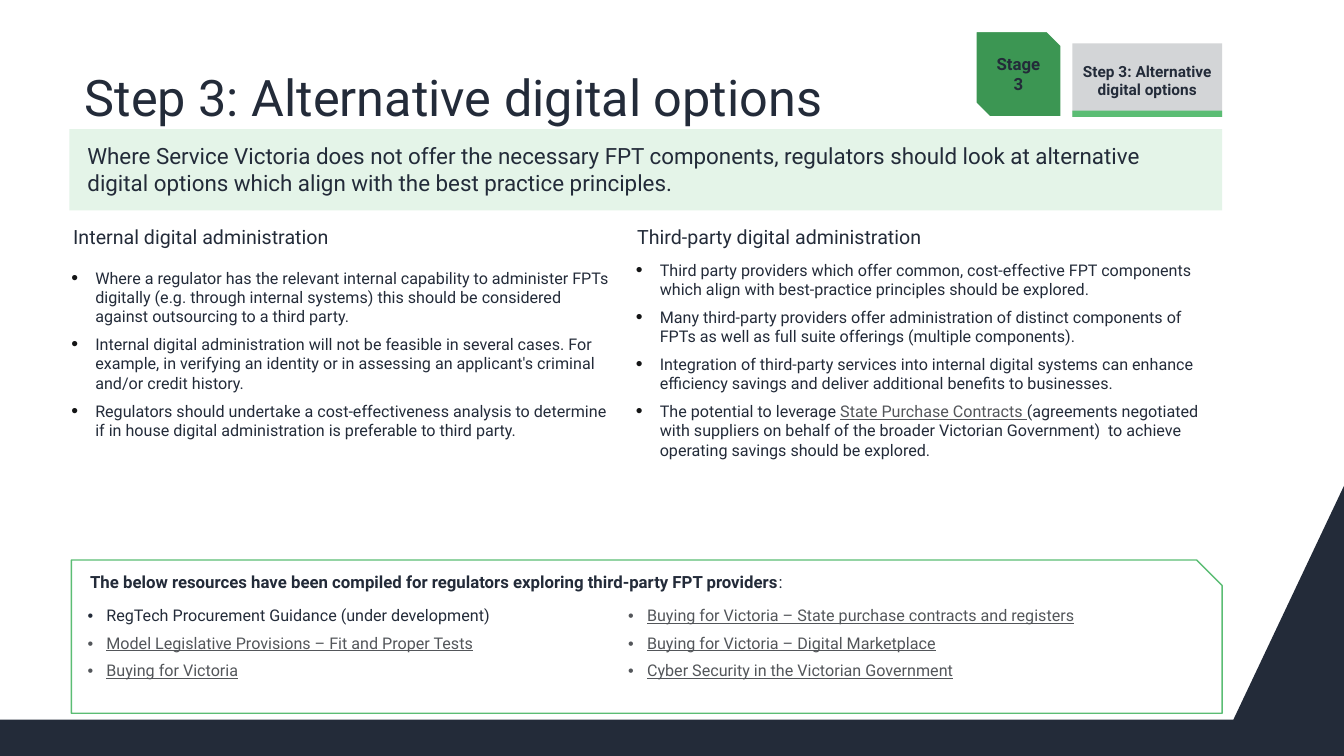
from lxml import etree
from pptx import Presentation
from pptx.dml.color import RGBColor
from pptx.enum.shapes import MSO_SHAPE
from pptx.enum.text import MSO_ANCHOR, PP_ALIGN
from pptx.oxml.ns import qn
from pptx.util import Pt

LEFT, CENTER = PP_ALIGN.LEFT, PP_ALIGN.CENTER
TOP, MIDDLE, BOTTOM = MSO_ANCHOR.TOP, MSO_ANCHOR.MIDDLE, MSO_ANCHOR.BOTTOM
RECT = MSO_SHAPE.RECTANGLE
SNIP_CORNER, SNIP_DIAGONAL = MSO_SHAPE.SNIP_1_RECTANGLE, MSO_SHAPE.SNIP_2_DIAG_RECTANGLE

FONT = "Roboto"
COLORS = {
    "ink": "232B39", "link": "53565A", "bullet": "141516", "white": "FFFFFF",
    "stage": "3C9653", "accent": "5BBD74", "pale": "E4F4E8", "grey": "D3D5D7",
}


def rgb(name):
    return RGBColor.from_string(COLORS[name])


def link(text):
    return (text, {"color": "link", "underline": True})


def add_bullet(paragraph, indent, color, percent):
    props = paragraph._p.get_or_add_pPr()
    props.set("marL", str(Pt(indent)))
    props.set("indent", str(-Pt(indent)))
    if color:
        fill = etree.SubElement(props, qn("a:buClr"))
        etree.SubElement(fill, qn("a:srgbClr"), val=COLORS[color])
    etree.SubElement(props, qn("a:buSzPct"), val=str(percent * 1000))
    etree.SubElement(props, qn("a:buFont"), typeface="Arial")
    etree.SubElement(props, qn("a:buChar"), char="•")


def write(frame, paragraphs, size=11.5, bold=False, align=LEFT, before=0, after=0,
          spacing=None, indent=0, bullet_color=None, bullet_percent=100):
    """Fill a text frame; each paragraph is a list of strings or (text, format) pairs."""
    frame.word_wrap = True
    for index, parts in enumerate(paragraphs):
        paragraph = frame.add_paragraph() if index else frame.paragraphs[0]
        paragraph.alignment = align
        paragraph.space_before, paragraph.space_after = Pt(before), Pt(after)
        if spacing:
            paragraph.line_spacing = spacing
        if indent:
            add_bullet(paragraph, indent, bullet_color, bullet_percent)
        for part in parts:
            if part == "\n":
                paragraph.add_line_break()
                continue
            text, style = (part, {}) if isinstance(part, str) else part
            run = paragraph.add_run()
            run.text = text
            run.font.name, run.font.size = FONT, Pt(size)
            run.font.bold = style.get("bold", bold)
            run.font.underline = style.get("underline", False)
            run.font.color.rgb = rgb(style.get("color", "ink"))


class Deck:
    """Holds the presentation style and the current slide."""

    def __init__(self, width, height):
        self.presentation = Presentation()
        self.presentation.slide_width, self.presentation.slide_height = Pt(width), Pt(height)
        self.slide = self.presentation.slides.add_slide(self.presentation.slide_layouts[6])

    def paint(self, shape, fill, line=None, line_width=1):
        shape.shadow.inherit = False
        if fill:
            shape.fill.solid()
            shape.fill.fore_color.rgb = rgb(fill)
        else:
            shape.fill.background()
        if line:
            shape.line.color.rgb, shape.line.width = rgb(line), Pt(line_width)
        else:
            shape.line.fill.background()

    def outline(self, points, fill):
        builder = self.slide.shapes.build_freeform(*map(Pt, points[0]), scale=1.0)
        builder.add_line_segments([(Pt(x), Pt(y)) for x, y in points[1:]], close=True)
        self.paint(builder.convert_to_shape(), fill)

    def box(self, kind, bounds, fill=None, line=None, line_width=1, paragraphs=(), **style):
        shape = self.slide.shapes.add_shape(kind, *map(Pt, bounds))
        self.paint(shape, fill, line, line_width)
        shape.text_frame.vertical_anchor = MIDDLE
        write(shape.text_frame, paragraphs, align=CENTER, **style)

    def text(self, bounds, paragraphs, anchor=TOP, side=7.2, **style):
        frame = self.slide.shapes.add_textbox(*map(Pt, bounds)).text_frame
        frame.vertical_anchor = anchor
        frame.margin_left = frame.margin_right = Pt(side)
        write(frame, paragraphs, **style)

    def table(self, bounds, columns, **style):
        table = self.slide.shapes.add_table(1, len(columns), *map(Pt, bounds)).table
        for cell, paragraphs in zip(table.rows[0].cells, columns):
            cell.fill.solid()
            cell.fill.fore_color.rgb = rgb("white")
            write(cell.text_frame, paragraphs, **style)


def main():
    deck = Deck(960, 540)
    deck.outline([(881, 514), (0, 514), (0, 540), (960, 540), (960, 347)], "ink")
    step = [["Step 3: Alternative digital options"]]
    deck.text((57.6, 13, 828, 81.3), step, anchor=BOTTOM, side=3, size=36, spacing=0.9)
    deck.box(SNIP_DIAGONAL, (696.5, 22, 62, 62), "stage", "white", 2,
             [["Stage", "\n", "3"]], size=12, bold=True)
    deck.box(RECT, (766, 31, 107, 52.5), "grey", paragraphs=step, size=11, bold=True)
    deck.box(RECT, (766, 79, 107, 4.5), "accent")
    deck.box(RECT, (49.5, 92.3, 823.5, 58), "pale")
    deck.text((55.4, 98, 811.4, 69), [[
        "Where Service Victoria does not offer the necessary FPT components, regulators should "
        "look at alternative digital options which align with the best practice principles."
    ]], size=16, before=2, after=2)

    internal_points = [
        ["Where a regulator has the relevant internal capability to administer FPTs digitally "
         "(e.g. through internal systems) this should be considered against outsourcing to a "
         "third party."],
        ["Internal digital administration will not be feasible in several cases. For example, "
         "in verifying an identity or in assessing an applicant's criminal and/or credit history."],
        ["Regulators should undertake a cost-effectiveness analysis to determine if in house "
         "digital administration is preferable to third party."],
    ]
    third_party_points = [
        ["Third party providers which offer common, cost-effective FPT components which align "
         "with best-practice principles should be explored."],
        ["Many third-party providers offer administration of distinct components of FPTs as "
         "well as full suite offerings (multiple components)."],
        ["Integration of third-party services into internal digital systems can enhance "
         "efficiency savings and deliver additional benefits to businesses."],
        ["The potential to leverage ", link("State Purchase Contracts "),
         "(agreements negotiated with suppliers on behalf of the broader Victorian "
         "Government)  to achieve operating savings should be explored."],
    ]
    options = [
        ("Internal digital administration", (45.2, 157, 340, 24.5),
         internal_points, (44, 188, 399, 145)),
        ("Third-party digital administration", (448, 157, 497.5, 24.5),
         third_party_points, (447.2, 182.2, 422, 193)),
    ]
    for heading, heading_bounds, points, points_bounds in options:
        deck.text(heading_bounds, [[heading]], size=14)
        deck.text(points_bounds, points, after=6, indent=17,
                  bullet_color="bullet", bullet_percent=120)

    deck.box(SNIP_CORNER, (51, 400, 822, 109.5), line="accent")
    deck.text((57.3, 404.5, 815.7, 21.8), [[
        "The below resources have been compiled for regulators exploring third-party FPT providers",
        (":", {"bold": False}),
    ]], size=12, bold=True, after=6)
    deck.table((55.3, 430, 772.4, 60.5), [
        [["RegTech Procurement Guidance (under development)"],
         [link("Model Legislative Provisions – Fit and Proper Tests")],
         [link("Buying for Victoria")]],
        [[link("Buying for Victoria – State purchase contracts and registers")],
         [link("Buying for Victoria – Digital Marketplace")],
         [link("Cyber Security in the Victorian Government")]],
    ], after=6, indent=13.5)
    deck.presentation.save("out.pptx")


if __name__ == "__main__":
    main()
